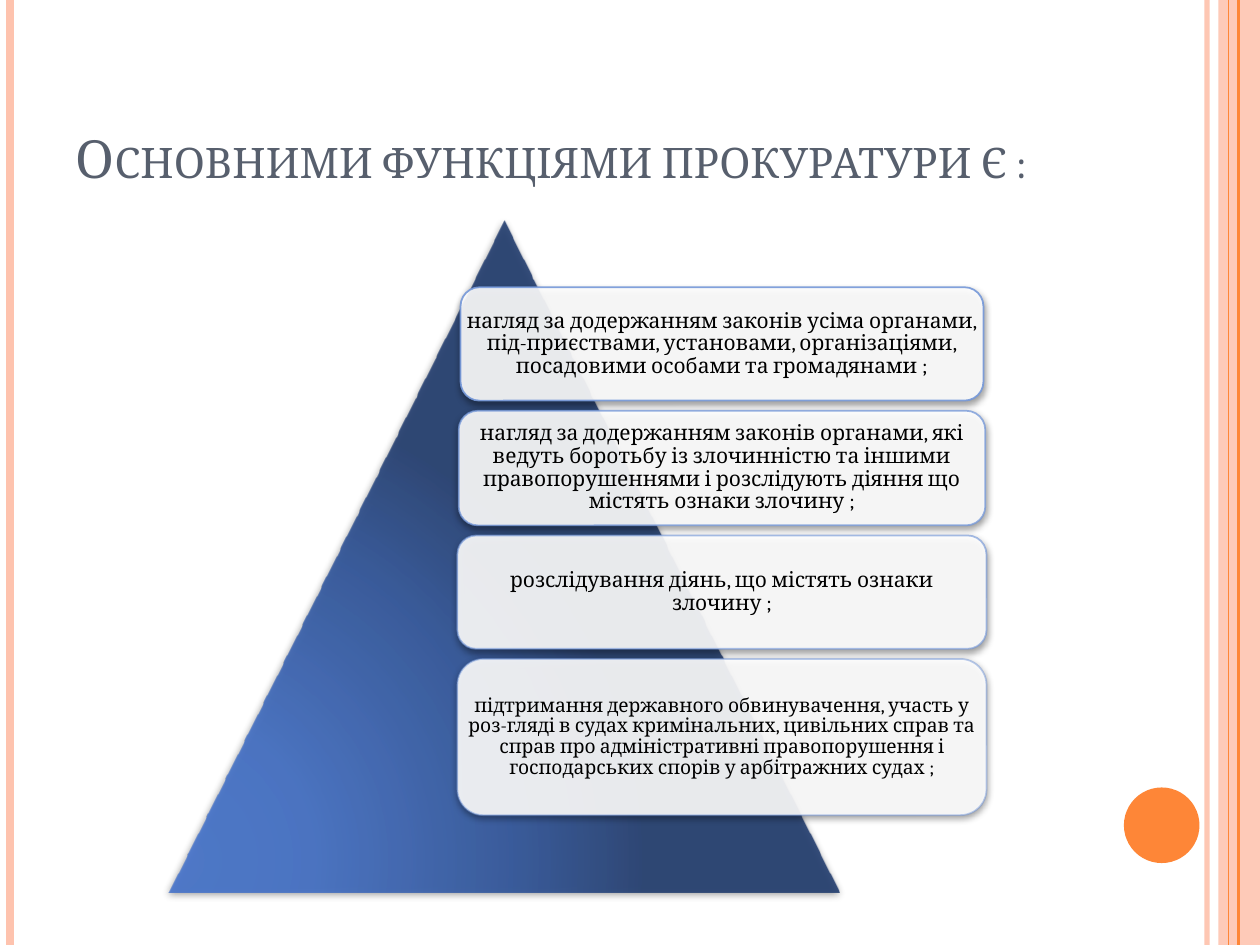
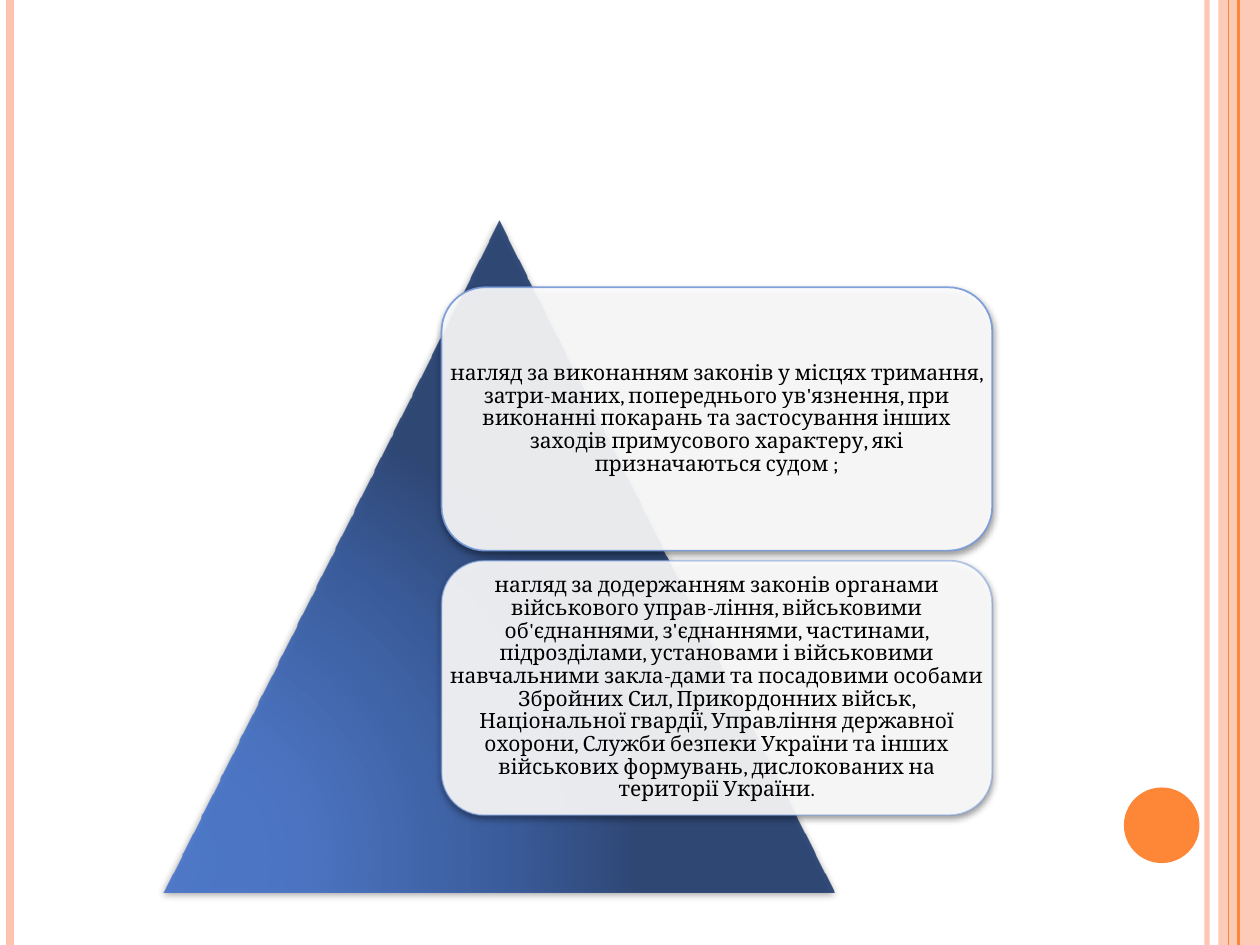
from pptx import Presentation
from pptx.dml.color import RGBColor
from pptx.enum.shapes import MSO_CONNECTOR as CONN, MSO_SHAPE as SHAPE
from pptx.enum.text import MSO_ANCHOR as ANCHOR, MSO_AUTO_SIZE as AUTO, PP_ALIGN as ALIGN
from pptx.oxml import parse_xml
from pptx.oxml.ns import nsdecls, qn
from pptx.util import Inches as In, Pt

FONT = "Cambria"
PEACH, ORANGE, SLATE, BLUE = "FEC3AE", "FE8637", "575F6D", "7598D9"
WHITE, BLACK = "FFFFFF", "000000"
W, H = 10, 7.5

# x, colour, width in points, opacity in percent
STRIPES = [(9.58, PEACH, 3, 93), (0.08, PEACH, 4.5, 100),
           (9.83, ORANGE, 1.5, 100), (9.75, ORANGE, 0.75, 100)]
BAND_W, DISC = 0.33, 0.6

GRADIENT = [(0, "4574CC"), (30, "4370C5"), (75, "2F5397"), (100, "233E70")]
PYRAMID_TOP, PYRAMID = 1.75, 5.33
CARD_TOP, CARD_GAP, CARD_SHIFT = 2.28, 0.08, 1.73

# title, pyramid centre, cards as (width, height, text size, text)
SLIDES = [
    ("Основними функціями прокуратури є :", 4.0, [
        (4.15, 0.9, 12, "нагляд за додержанням законів усіма органами, під-приєствами, "
         "установами, організаціями, посадовими особами та громадянами ;"),
        (4.18, 0.91, 12, "нагляд за додержанням законів органами, які ведуть боротьбу із "
         "злочинністю та іншими правопорушеннями і розслідують діяння що містять "
         "ознаки злочину ;"),
        (4.2, 0.9, 12, "розслідування діянь, що містять ознаки злочину ;"),
        (4.2, 1.24, 11, "підтримання державного обвинувачення, участь у роз-гляді в судах "
         "кримінальних, цивільних справ та справ про адміністративні правопорушення "
         "і господарських спорів у арбітражних судах ;"),
    ]),
    (None, 3.96, [
        (4.37, 2.09, 12, "нагляд за виконанням законів у місцях тримання, затри-маних, "
         "попереднього ув'язнення, при виконанні покарань та застосування інших "
         "заходів примусового характеру, які призначаються судом ;"),
        (4.37, 2.02, 12, "нагляд за додержанням законів органами військового управ-ління, "
         "військовими об'єднаннями, з'єднаннями, частинами, підрозділами, установами "
         "і військовими навчальними закла-дами та посадовими особами Збройних Сил, "
         "Прикордонних військ, Національної гвардії, Управління державної охорони, "
         "Служби безпеки України та інших військових формувань, дислокованих на "
         "території України."),
    ]),
]


def paint(fill, color, opacity=100):
    """Give a shape, line or font fill a solid colour, opacity in percent."""
    fill.solid()
    fill.fore_color.rgb = RGBColor.from_string(color)
    if opacity < 100:
        clr = fill._xPr.find(qn("a:solidFill"))[0]
        clr.append(parse_xml(f'<a:alpha {nsdecls("a")} val="{round(opacity * 1000)}"/>'))


def add_plain(s, kind, x, y, w, h, shadow=False):
    """Add a preset shape without outline, with a soft shadow if asked."""
    sp = s.shapes.add_shape(kind, In(x), In(y), In(w), In(h))
    sp.line.fill.background()
    sp.shadow.inherit = False
    if shadow:
        sp._element.spPr.find(qn("a:effectLst")).append(parse_xml(
            f'<a:outerShdw {nsdecls("a")} blurRad="{Pt(4)}" dist="{Pt(1.6)}" dir="5400000" '
            f'rotWithShape="0"><a:srgbClr val="{BLACK}"><a:alpha val="42000"/></a:srgbClr>'
            '</a:outerShdw>'))
    return sp


prs = Presentation()
prs.slide_width, prs.slide_height = In(W), In(H)
TITLE_ONLY, BLANK = prs.slide_layouts[5], prs.slide_layouts[6]

for title, center, cards in SLIDES:
    s = prs.slides.add_slide(TITLE_ONLY if title else BLANK)

    # Side band, stripes and disc
    band = add_plain(s, SHAPE.RECTANGLE, W - BAND_W, 0, BAND_W, H)
    paint(band.fill, PEACH, 87)
    for x, color, width, opacity in STRIPES:
        ln = s.shapes.add_connector(CONN.STRAIGHT, In(x), 0, In(x), In(H))
        ln.line.width = Pt(width)
        paint(ln.line.fill, color, opacity)
        ln._element.spPr.append(parse_xml(f'<a:effectLst {nsdecls("a")}/>'))
    disc = add_plain(s, SHAPE.OVAL, 8.92, 6.25, DISC, DISC)
    paint(disc.fill, ORANGE)

    if title:
        sp = s.shapes.title
        sp.left, sp.top, sp.width, sp.height = In(0.5), In(0.3), In(8.17), In(1.25)
        tf = sp.text_frame
        tf.auto_size, tf.vertical_anchor = AUTO.NONE, ANCHOR.BOTTOM
        p = tf.paragraphs[0]
        p.alignment = ALIGN.LEFT
        r = p.add_run()
        r.text = title
        r.font.name, r.font.size = FONT, Pt(30)
        paint(r.font.fill, SLATE)
        r.font._element.set("cap", "small")

    # Pyramid with a radial gradient
    pyramid = add_plain(s, SHAPE.ISOSCELES_TRIANGLE, center - PYRAMID / 2, PYRAMID_TOP,
                        PYRAMID, PYRAMID, shadow=True)
    pyramid.fill.background()
    stops = "".join(f'<a:gs pos="{pos * 1000}"><a:srgbClr val="{color}">'
                    '<a:alpha val="90000"/></a:srgbClr></a:gs>' for pos, color in GRADIENT)
    sp_pr = pyramid._element.spPr
    sp_pr.replace(sp_pr.find(qn("a:noFill")), parse_xml(
        f'<a:gradFill {nsdecls("a")} rotWithShape="1"><a:gsLst>{stops}</a:gsLst>'
        '<a:path path="circle"><a:fillToRect l="5000" t="100000" r="120000" b="10000"/>'
        '</a:path></a:gradFill>'))

    # Cards stacked over the right side, outlines fading downwards
    y = CARD_TOP
    for i, (w, h, size, text) in enumerate(cards):
        x = center + CARD_SHIFT - w / 2
        card = add_plain(s, SHAPE.ROUNDED_RECTANGLE, x, y, w, h, shadow=True)
        paint(card.fill, WHITE, 90)
        card.line.width = Pt(1)
        paint(card.line.fill, BLUE, 90 - 40 * i / (len(cards) - 1))

        tf = s.shapes.add_textbox(In(x), In(y), In(w), In(h)).text_frame
        tf.word_wrap, tf.vertical_anchor = True, ANCHOR.MIDDLE
        tf.margin_left = tf.margin_right = tf.margin_top = tf.margin_bottom = In(0.05)
        p = tf.paragraphs[0]
        p.alignment, p.line_spacing = ALIGN.CENTER, 0.9
        r = p.add_run()
        r.text = text
        r.font.name, r.font.size = FONT, Pt(size)
        paint(r.font.fill, BLACK)
        y += h + CARD_GAP

prs.save("out.pptx")
